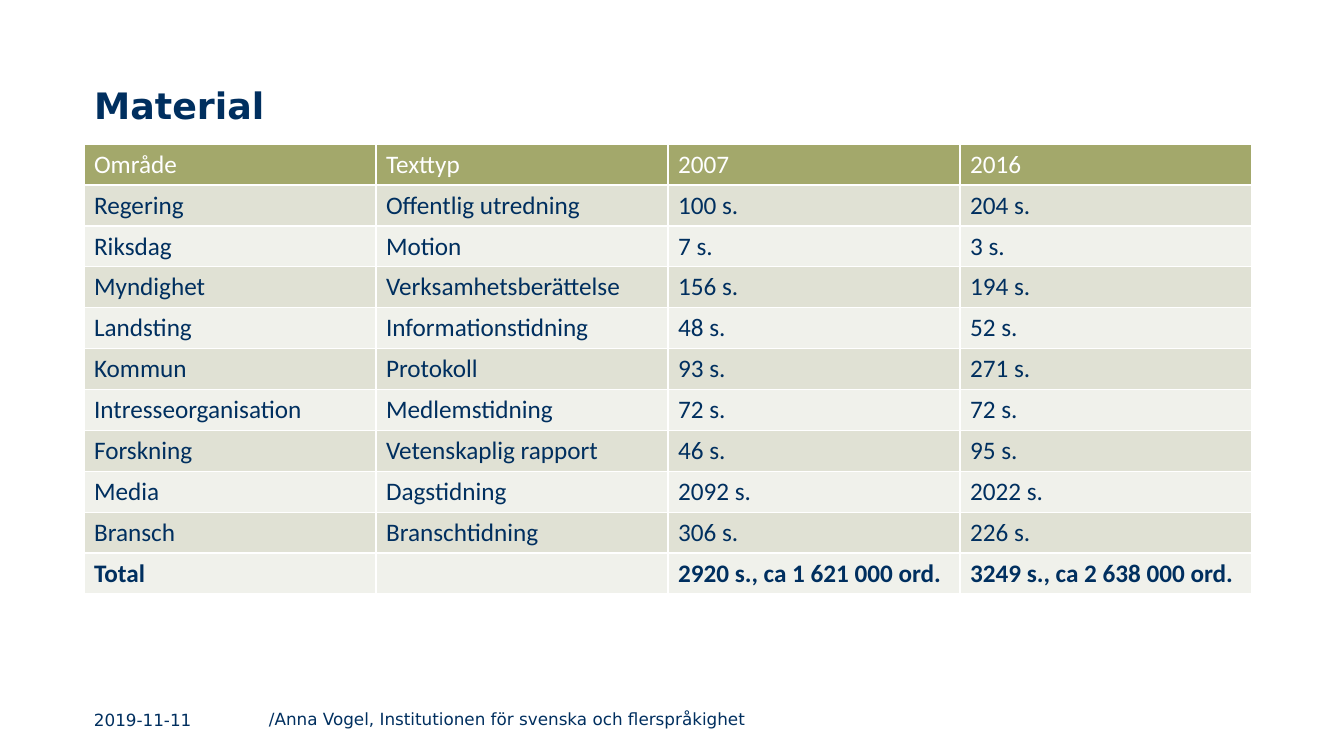
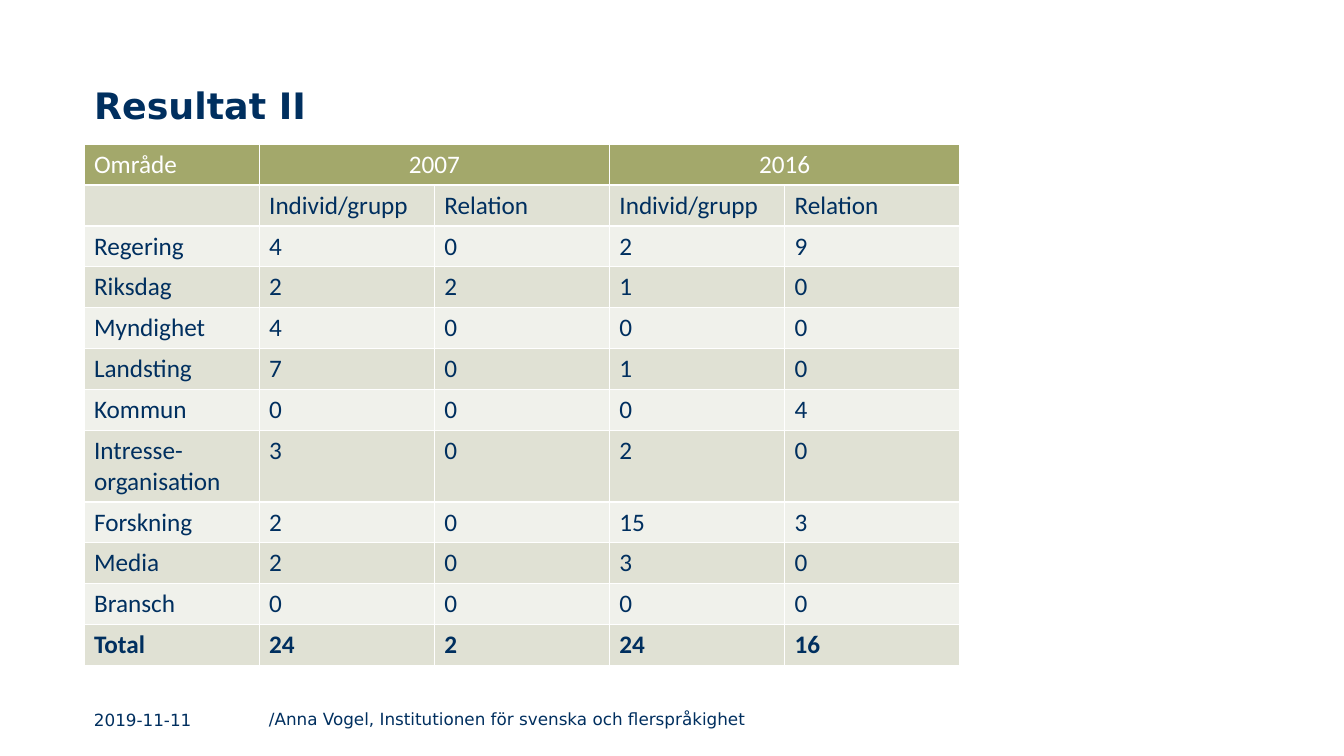
from pptx import Presentation
from pptx.dml.color import RGBColor as RGB
from pptx.enum.text import MSO_ANCHOR as Anchor, MSO_AUTO_SIZE as Auto, PP_ALIGN as Align
from pptx.util import Pt

# Content
DATE = "2019-11-11"
NOTE = "/Anna Vogel, Institutionen för svenska och flerspråkighet"

SLIDES = [
    {
        "title": "Material",
        "col": 208.6,
        "spans": [],
        "rows": [
            ("Område", "Texttyp", "2007", "2016"),
            ("Regering", "Offentlig utredning", "100 s.", "204 s."),
            ("Riksdag", "Motion", "7 s.", "3 s."),
            ("Myndighet", "Verksamhetsberättelse", "156 s.", "194 s."),
            ("Landsting", "Informationstidning", "48 s.", "52 s."),
            ("Kommun", "Protokoll", "93 s.", "271 s."),
            ("Intresseorganisation", "Medlemstidning", "72 s.", "72 s."),
            ("Forskning", "Vetenskaplig rapport", "46 s.", "95 s."),
            ("Media", "Dagstidning", "2092 s.", "2022 s."),
            ("Bransch", "Branschtidning", "306 s.", "226 s."),
            ("Total", "", "2920 s., ca 1 621 000 ord.", "3249 s., ca 2 638 000 ord."),
        ],
    },
    {
        "title": "Resultat II",
        "col": 125.1,
        "spans": [(1, 2), (3, 4)],
        "rows": [
            ("Område", "2007", "", "2016", ""),
            ("", "Individ/grupp", "Relation", "Individ/grupp", "Relation"),
            ("Regering", 4, 0, 2, 9),
            ("Riksdag", 2, 2, 1, 0),
            ("Myndighet", 4, 0, 0, 0),
            ("Landsting", 7, 0, 1, 0),
            ("Kommun", 0, 0, 0, 4),
            ("Intresse-organisation", 3, 0, 2, 0),
            ("Forskning", 2, 0, 15, 3),
            ("Media", 2, 0, 3, 0),
            ("Bransch", 0, 0, 0, 0),
            ("Total", 24, 2, 24, 16),
        ],
    },
]

# Shared look
NAVY = RGB(0x00, 0x2F, 0x5F)
WHITE = RGB(0xFF, 0xFF, 0xFF)
OLIVE = RGB(0xA3, 0xA8, 0x6B)
BANDS = [RGB(0xF0, 0xF1, 0xEB), RGB(0xE0, 0xE1, 0xD4)]

HEAD = {"name": "DejaVu Sans", "size": Pt(26), "bold": True}
FOOT = {"name": "DejaVu Sans", "size": Pt(12), "bold": False}
CELL = {"name": "Calibri", "size": Pt(18)}

LEFT, TOP, ROW = 60, 103, 29.2
FOOTERS = [
    (DATE, (LEFT, 503.3, 118, 22.3), Anchor.MIDDLE),
    (NOTE, (185, 502.6, 461, 23), Anchor.TOP),
]


def style(par, look, color=NAVY):
    for key, val in look.items():
        setattr(par.font, key, val)
    par.font.color.rgb = color


def place(shape, box):
    for key, val in zip(("left", "top", "width", "height"), box):
        setattr(shape, key, Pt(val))


def add_title(slide, text):
    title = slide.shapes.title
    place(title, (LEFT, 31.7, 831.6, 62.6))
    frame = title.text_frame
    frame.text = text
    frame.auto_size = Auto.NONE
    frame.vertical_anchor = Anchor.BOTTOM
    par = frame.paragraphs[0]
    par.alignment = Align.LEFT
    style(par, HEAD)


def add_grid(slide, rows, col, spans):
    count, wide = len(rows), len(rows[0])
    grid = slide.shapes.add_table(
        count, wide, Pt(LEFT), Pt(TOP), Pt(col * wide), Pt(ROW * count)).table
    for line in grid.columns:
        line.width = Pt(col)
    for r, row in enumerate(rows):
        grid.rows[r].height = Pt(ROW)
        for c, value in enumerate(row):
            cell = grid.cell(r, c)
            cell.text = str(value)
            cell.fill.solid()
            cell.fill.fore_color.rgb = BANDS[r % 2] if r else OLIVE
            look = CELL | {"bold": r == count - 1}
            style(cell.text_frame.paragraphs[0], look, NAVY if r else WHITE)
    # Year headings cover two columns each
    for first, last in spans:
        cell = grid.cell(0, first)
        cell.merge(grid.cell(0, last))
        cell.text_frame.paragraphs[0].alignment = Align.CENTER


def add_foot(slide):
    for text, box, anchor in FOOTERS:
        frame = slide.shapes.add_textbox(*map(Pt, box)).text_frame
        frame.word_wrap = True
        frame.vertical_anchor = anchor
        frame.text = text
        style(frame.paragraphs[0], FOOT)


def main():
    deck = Presentation()
    deck.slide_width, deck.slide_height = Pt(960), Pt(540)
    for data in SLIDES:
        slide = deck.slides.add_slide(deck.slide_layouts[5])
        add_title(slide, data["title"])
        add_grid(slide, data["rows"], data["col"], data["spans"])
        add_foot(slide)
    deck.save("out.pptx")


if __name__ == "__main__":
    main()
